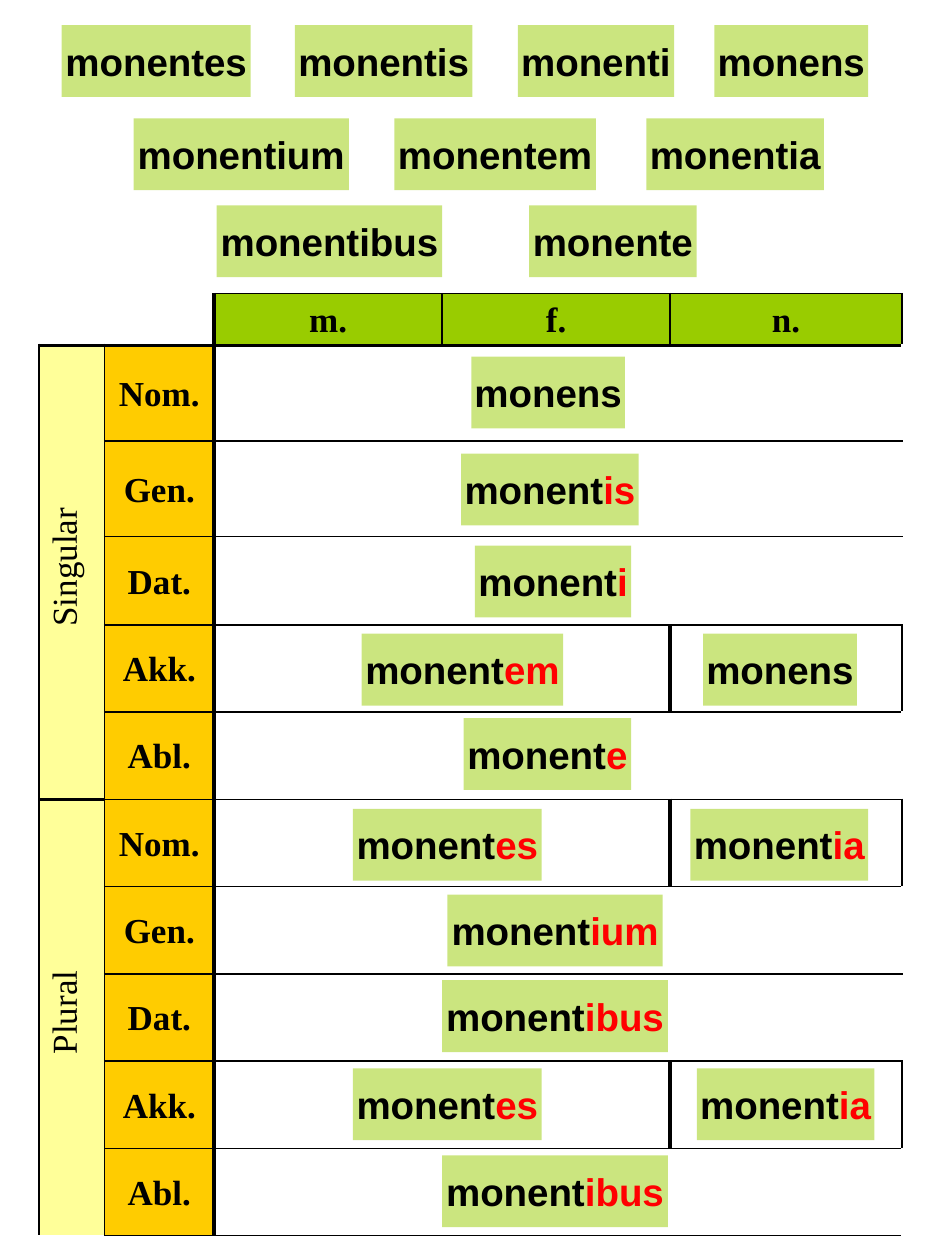
from lxml.etree import SubElement
from pptx import Presentation
from pptx.dml.color import RGBColor
from pptx.enum.shapes import MSO_SHAPE
from pptx.enum.text import MSO_ANCHOR, MSO_AUTO_SIZE, PP_ALIGN
from pptx.oxml import parse_xml
from pptx.oxml.ns import nsdecls, qn
from pptx.util import Inches, Pt

COLORS = {
    "text": "000000", "ending": "FF0000", "tile": "99CC00",
    "header": "99CC00", "number": "FFFF99", "case": "FFCC00", "border": "000000",
}
THIN, THICK = 1, 2.25

TILE_HEIGHT = 0.57
TILE_WIDTHS = {
    "monens": 1.22, "monenti": 1.24, "monente": 1.33, "monentis": 1.41,
    "monentia": 1.41, "monentes": 1.5, "monentem": 1.6, "monentium": 1.71,
    "monentibus": 1.79,
}
# Each row: top, then (word, left) pairs
WORD_BANK = [
    (0.2, [("monentes", 0.49), ("monentis", 2.34), ("monenti", 4.11), ("monens", 5.67)]),
    (0.94, [("monentium", 1.06), ("monentem", 3.13), ("monentia", 5.13)]),
    (1.63, [("monentibus", 1.72), ("monente", 4.2)]),
]
# A bar separates the stem from the highlighted ending
ANSWERS = [
    (2.83, [("monens", 3.74)]),
    (3.6, [("monent|is", 3.66)]),
    (4.33, [("monent|i", 3.77)]),
    (5.03, [("monent|em", 2.87), ("monens", 5.58)]),
    (5.7, [("monent|e", 3.68)]),
    (6.42, [("monent|es", 2.8), ("monent|ia", 5.48)]),
    (7.1, [("monent|ium", 3.55)]),
    (7.78, [("monent|ibus", 3.51)]),
    (8.48, [("monent|es", 2.8), ("monent|ia", 5.53)]),
    (9.17, [("monent|ibus", 3.51)]),
]

TABLE_LEFT, TABLE_TOP, TABLE_HEIGHT = 0.31, 2.33, 7.48
COLUMN_WIDTHS = [0.52, 0.87, 1.81, 1.81, 1.84]
FIRST_ROWS = [0.41, 0.76, 0.76, 0.7]
ROW_HEIGHTS = FIRST_ROWS + [(TABLE_HEIGHT - sum(FIRST_ROWS)) / 7] * 7
GENDERS = ["m.", "f.", "n."]
NUMBERS = ["Singular", "Plural"]
CASES = ["Nom.", "Gen.", "Dat.", "Akk.", "Abl."]
NEUTER_ROWS = {4, 6, 9}


def rgb(name):
    return RGBColor.from_string(COLORS[name])


def add_tile(page, word, left, top):
    stem, _, ending = word.partition("|")
    box = page.shapes.add_shape(
        MSO_SHAPE.RECTANGLE, Inches(left), Inches(top),
        Inches(TILE_WIDTHS[stem + ending]), Inches(TILE_HEIGHT))
    box.shadow.inherit = False
    box.line.fill.background()
    box.fill.solid()
    box.fill.fore_color.rgb = rgb("tile")
    color = box.fill._xPr.find(qn("a:solidFill"))[0]
    SubElement(color, qn("a:alpha")).set("val", "50000")

    frame = box.text_frame
    frame.word_wrap = False
    frame.auto_size = MSO_AUTO_SIZE.SHAPE_TO_FIT_TEXT
    frame.vertical_anchor = MSO_ANCHOR.TOP
    frame.margin_left = frame.margin_right = Inches(0.02)
    frame.margin_top = frame.margin_bottom = Inches(0.1)
    para = frame.paragraphs[0]
    para.alignment = PP_ALIGN.CENTER
    para.font.name, para.font.size, para.font.bold = "Arial", Pt(22), True
    for text, color_name in ((stem, "text"), (ending, "ending")):
        if text:
            span = para.add_run()
            span.text = text
            span.font.color.rgb = rgb(color_name)


def add_tiles(page, rows):
    for top, tiles in rows:
        for word, left in tiles:
            add_tile(page, word, left, top)


def set_borders(cell, widths):
    """Draw the given sides, a dict of L, R, T, B to points."""
    properties = cell._tc.get_or_add_tcPr()
    sides = [side for side in "LRTB" if side in widths]
    for index, side in enumerate(sides):
        properties.insert(index, parse_xml(
            f'<a:ln{side} {nsdecls("a")} w="{Pt(widths[side])}"><a:solidFill>'
            f'<a:srgbClr val="{COLORS["border"]}"/></a:solidFill></a:ln{side}>'))


def format_region(table, top, left, bottom, right, fill=None):
    """Merge a block of cells, fill it and outline it; return its first cell."""
    first = table.cell(top, left)
    if (top, left) != (bottom, right):
        first.merge(table.cell(bottom, right))
    for row in range(top, bottom + 1):
        for column in range(left, right + 1):
            cell = table.cell(row, column)
            cell.margin_left = cell.margin_right = Inches(0.06)
            cell.margin_top = cell.margin_bottom = Inches(0.03)
            if fill:
                cell.fill.solid()
                cell.fill.fore_color.rgb = rgb(fill)
            else:
                cell.fill.background()
            widths = {}
            is_corner = row == 0 and column < 2
            if column == left and not is_corner:
                widths["L"] = THICK if column == 2 else THIN
            if column == right:
                widths["R"] = THICK if column == 1 else THIN
            if row == top and not is_corner:
                widths["T"] = THICK if row == 1 else THIN
            if row == bottom:
                widths["B"] = THICK if row == 0 else THIN
            set_borders(cell, widths)
    return first


def write_label(cell, text, bold=True):
    cell.vertical_anchor = MSO_ANCHOR.MIDDLE
    para = cell.text_frame.paragraphs[0]
    para.text = text
    para.alignment = PP_ALIGN.CENTER
    para.line_spacing = 1.07
    font = para.font
    font.name, font.size, font.bold = "Times New Roman", Pt(20), bold
    font.color.rgb = rgb("text")


def add_declension_table(page):
    table = page.shapes.add_table(
        len(ROW_HEIGHTS), len(COLUMN_WIDTHS), Inches(TABLE_LEFT), Inches(TABLE_TOP),
        Inches(sum(COLUMN_WIDTHS)), Inches(TABLE_HEIGHT)).table
    table.first_row = table.horz_banding = False
    for column, width in zip(table.columns, COLUMN_WIDTHS):
        column.width = Inches(width)
    for row, height in zip(table.rows, ROW_HEIGHTS):
        row.height = Inches(height)

    format_region(table, 0, 0, 0, 1)
    for column, gender in enumerate(GENDERS, 2):
        write_label(format_region(table, 0, column, 0, column, "header"), gender)
    for index, number in enumerate(NUMBERS):
        top = 1 + index * len(CASES)
        cell = format_region(table, top, 0, top + len(CASES) - 1, 0, "number")
        write_label(cell, number, bold=False)
        cell._tc.get_or_add_tcPr().set("vert", "vert270")
        indent = cell.text_frame.paragraphs[0]._p.get_or_add_pPr()
        indent.set("marL", str(Inches(0.08)))
    for row, case in enumerate(CASES * len(NUMBERS), 1):
        write_label(format_region(table, row, 1, row, 1, "case"), case)
        if row in NEUTER_ROWS:
            format_region(table, row, 2, row, 3)
            format_region(table, row, 4, row, 4)
        else:
            format_region(table, row, 2, row, 4)


def main():
    deck = Presentation()
    deck.slide_width, deck.slide_height = Inches(7.5), Inches(10)
    page = deck.slides.add_slide(deck.slide_layouts[6])
    add_declension_table(page)
    add_tiles(page, WORD_BANK)
    add_tiles(page, ANSWERS)
    deck.save("out.pptx")


if __name__ == "__main__":
    main()
